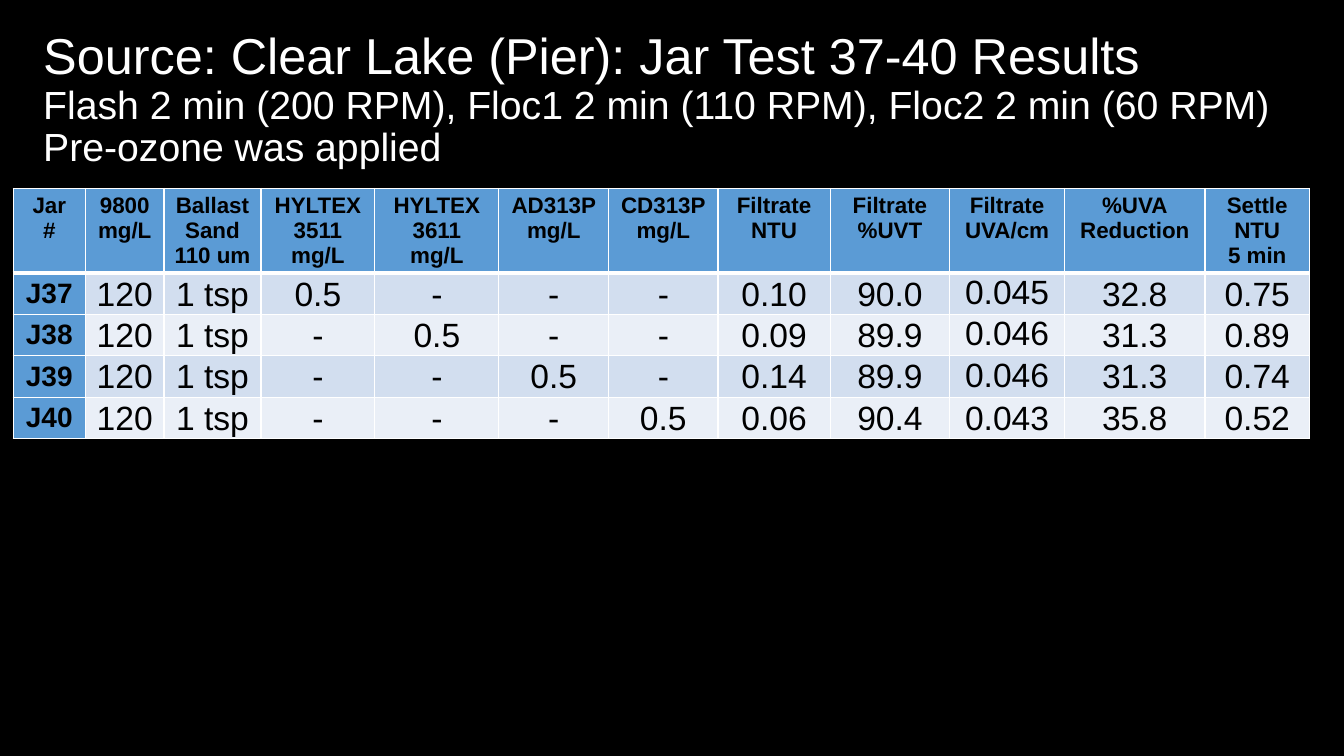
from lxml import etree
from pptx import Presentation
from pptx.dml.color import RGBColor
from pptx.enum.text import MSO_ANCHOR as Anchor, PP_ALIGN as Align
from pptx.oxml.ns import qn
from pptx.util import Pt

# Content
TITLE_LINES = [
    ("Source: Clear Lake (Pier): Jar Test 37-40 Results", 36),
    ("Flash 2 min (200 RPM), Floc1 2 min (110 RPM), Floc2 2 min (60 RPM)", 28),
    ("Pre-ozone was applied", 28),
]
# Header text and column width
COLUMNS = [
    ("Jar #", 51.6), ("9800\nmg/L", 56.2), ("Ballast\nSand\n110 um", 69.2),
    ("HYLTEX\n3511\nmg/L", 81.4), ("HYLTEX\n3611\nmg/L", 88.6),
    ("AD313P\nmg/L", 78.5), ("CD313P\nmg/L", 78), ("Filtrate\nNTU", 80.2),
    ("Filtrate\n%UVT", 85.4), ("Filtrate\nUVA/cm", 82), ("%UVA\nReduction", 100.4),
    ("Settle\nNTU\n5 min", 74.6),
]
RESULTS = [
    ("J37", "120", "1 tsp", "0.5", "-", "-", "-", "0.10", "90.0", "0.045", "32.8", "0.75"),
    ("J38", "120", "1 tsp", "-", "0.5", "-", "-", "0.09", "89.9", "0.046", "31.3", "0.89"),
    ("J39", "120", "1 tsp", "-", "-", "0.5", "-", "0.14", "89.9", "0.046", "31.3", "0.74"),
    ("J40", "120", "1 tsp", "-", "-", "-", "0.5", "0.06", "90.4", "0.043", "35.8", "0.52"),
]
COLORS = {"background": "000000", "title": "FFFFFF", "text": "000000",
          "border": "FFFFFF", "header": "5B9BD5", "odd": "D2DEEF", "even": "EAEFF7"}
FONT = "Arial"
HEADER_HEIGHT, ROW_HEIGHT = 60.5, 29.5
UVA_COLUMN = 9


def rgb(name):
    return RGBColor.from_string(COLORS[name])


def format_run(run, size, color, bold=False):
    run.font.name = FONT
    run.font.size = Pt(size)
    run.font.bold = bold
    run.font.color.rgb = rgb(color)


def add_borders(cell, widths):
    properties = cell._tc.get_or_add_tcPr()
    for index, (side, width) in enumerate(widths.items()):
        line = etree.Element(qn(f"a:ln{side}"), w=str(Pt(width)))
        fill = etree.SubElement(line, qn("a:solidFill"))
        etree.SubElement(fill, qn("a:srgbClr"), val=COLORS["border"])
        properties.insert(index, line)


def fill_cell(cell, text, row, column):
    is_header = row == 0
    is_label = is_header or column == 0
    cell.text_frame.text = text
    size = 16 if is_header else 20 if is_label else 24
    for paragraph in cell.text_frame.paragraphs:
        paragraph.alignment = Align.CENTER
        for run in paragraph.runs:
            format_run(run, size, "text", is_label)
    cell.fill.solid()
    cell.fill.fore_color.rgb = rgb("header" if is_label else "odd" if row % 2 else "even")
    if not is_label:
        cell.margin_left = cell.margin_right = cell.margin_top = Pt(0.72)
        cell.margin_bottom = 0
        at_top = column == UVA_COLUMN and row < len(RESULTS)
        cell.vertical_anchor = Anchor.TOP if at_top else Anchor.MIDDLE
    add_borders(cell, {"L": 1, "R": 1, "T": 3 if row == 1 else 1, "B": 3 if is_header else 1})


presentation = Presentation()
presentation.slide_width, presentation.slide_height = Pt(960), Pt(540)
slide = presentation.slides.add_slide(presentation.slide_layouts[6])
slide.background.fill.solid()
slide.background.fill.fore_color.rgb = rgb("background")

# Results table
headers, widths = zip(*COLUMNS)
rows = [headers, *RESULTS]
heights = [HEADER_HEIGHT] + [ROW_HEIGHT] * len(RESULTS)
table = slide.shapes.add_table(len(rows), len(COLUMNS), Pt(9.4), Pt(134.6),
                               Pt(sum(widths)), Pt(sum(heights))).table
for column, width in zip(table.columns, widths):
    column.width = Pt(width)
for row, height in zip(table.rows, heights):
    row.height = Pt(height)
for row_index, values in enumerate(rows):
    for column_index, value in enumerate(values):
        fill_cell(table.cell(row_index, column_index), value, row_index, column_index)

# Title with test conditions
title = slide.shapes.add_textbox(Pt(23.8), Pt(9.4), Pt(897.8), Pt(125.3))
title.text_frame.word_wrap = True
title.text_frame.vertical_anchor = Anchor.MIDDLE
paragraph = title.text_frame.paragraphs[0]
paragraph.text = "\v".join(text for text, size in TITLE_LINES)
paragraph.line_spacing = 0.9
for run, (text, size) in zip(paragraph.runs, TITLE_LINES):
    format_run(run, size, "title")

presentation.save("out.pptx")
